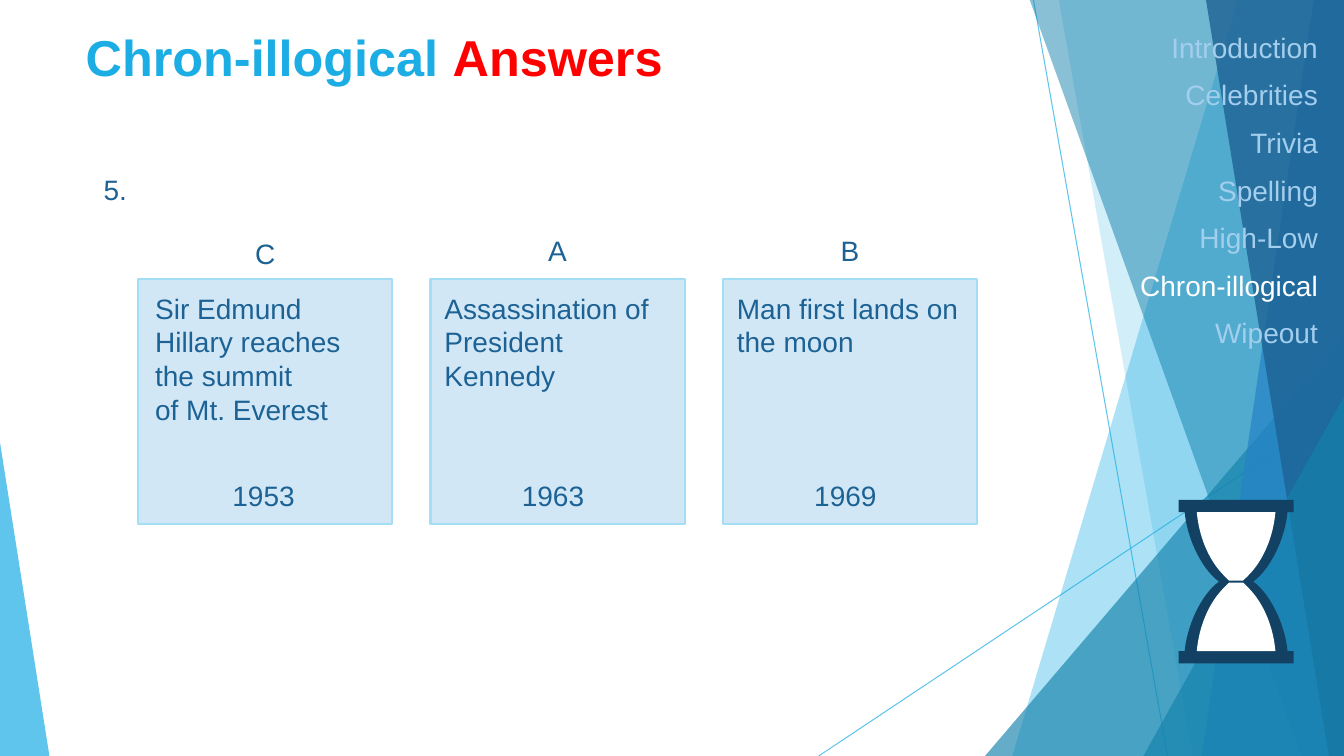
"""Build the quiz answer slide with its ribbon backdrop, dated cards, section menu and hourglass."""
from dataclasses import dataclass

from lxml import etree
from pptx import Presentation
from pptx import util as u
from pptx.dml.color import RGBColor
from pptx.enum import shapes, text
from pptx.oxml import ns

HARD_SPACE = chr(160)


@dataclass(frozen=True)
class Theme:
    font: str = "Arial"
    title_size: int = 36
    body_size: int = 20
    sky: str = "1CADE4"
    teal: str = "1482AC"
    blue: str = "2683C6"
    navy: str = "1D6294"
    red: str = "FF0000"
    card: str = "D1E7F6"
    card_edge: str = "A4DEF4"
    menu: str = "A3CEED"
    white: str = "FFFFFF"
    frame: str = "134163"


class SlideBuilder:
    def __init__(self, deck, theme):
        self.theme = theme
        self.slide = deck.slides.add_slide(deck.slide_layouts[5])
        self.width = 13.33
        self.height = 7.5

    def paint(self, shape, color, opacity=100, edge=None):
        shape.shadow.inherit = False
        shape.fill.solid()
        shape.fill.fore_color.rgb = RGBColor.from_string(color)
        if opacity < 100:
            self.fade(shape, opacity)
        if edge:
            shape.line.color.rgb = RGBColor.from_string(edge)
            shape.line.width = u.Pt(1.5)
        else:
            shape.line.fill.background()

    def fade(self, shape, opacity):
        color = next(shape._element.spPr.iter(ns.qn("a:srgbClr")))
        etree.SubElement(color, ns.qn("a:alpha"), val=str(opacity * 1000))

    def style(self, font, color, size=None, bold=False):
        font.name = self.theme.font
        font.size = u.Pt(size or self.theme.body_size)
        font.bold = bold
        font.color.rgb = RGBColor.from_string(color)

    def title(self, parts, box):
        title = self.slide.shapes.title
        title.left, title.top, title.width, title.height = map(u.Inches, box)
        frame = title.text_frame
        frame.auto_size = text.MSO_AUTO_SIZE.NONE
        frame.vertical_anchor = text.MSO_ANCHOR.TOP
        paragraph = frame.paragraphs[0]
        paragraph.alignment = text.PP_ALIGN.LEFT
        for words, color in parts:
            run = paragraph.add_run()
            run.text = words
            self.style(run.font, color, self.theme.title_size, True)

    def text(self, lines, box, align=text.PP_ALIGN.LEFT, wrap=True, before=0):
        frame = self.slide.shapes.add_textbox(*map(u.Inches, box)).text_frame
        frame.word_wrap = wrap
        for index, (words, color) in enumerate(lines):
            paragraph = frame.add_paragraph() if index else frame.paragraphs[0]
            paragraph.text = words
            paragraph.alignment = align
            paragraph.space_before = u.Pt(before)
            self.style(paragraph.font, color)

    def preset(self, kind, box, color, opacity=100, edge=None, apex=None):
        shape = self.slide.shapes.add_shape(kind, *map(u.Inches, box))
        if apex is not None:
            shape.adjustments[0] = apex
        self.paint(shape, color, opacity, edge)

    def triangle(self, left, top, width, color, opacity, apex):
        box = (left, top, width, self.height - top)
        self.preset(shapes.MSO_SHAPE.ISOSCELES_TRIANGLE, box, color, opacity, apex=apex)

    def outline(self, points, color, opacity=100):
        corners = [(u.Inches(x), u.Inches(y)) for x, y in points]
        builder = self.slide.shapes.build_freeform(*corners[0])
        builder.add_line_segments(corners[1:], close=True)
        self.paint(builder.convert_to_shape(), color, opacity)

    def ribbon(self, top_left, bottom_left, color, opacity):
        self.outline([(top_left, -0.01), (self.width, -0.01),
                      (self.width, self.height), (bottom_left, self.height)],
                     color, opacity)

    def line(self, start, end):
        line = self.slide.shapes.add_connector(
            shapes.MSO_CONNECTOR.STRAIGHT, *map(u.Inches, start + end))
        line.line.color.rgb = RGBColor.from_string(self.theme.sky)
        line.line.width = u.Pt(0.75)
        self.fade(line, 70)
        etree.SubElement(line._element.spPr, ns.qn("a:effectLst"))

    def hourglass(self, center_x, center_y):
        rim = [(0.57, -0.81), (0.57, -0.69)]
        outer = rim + curve((0.51, -0.69), (0.49, -0.46), (0.36, -0.14), (0.17, 0))
        inner = curve((0.39, -0.69), (0.37, -0.46), (0.28, -0.22), (0.12, -0.06))
        inner.append((0.07, -0.01))

        def placed(points, flip=1):
            return [(center_x + x, center_y + flip * y) for x, y in points]

        right = outer + [(x, -y) for x, y in reversed(outer)]
        self.outline(placed(right + mirrored(right)), self.theme.frame)
        for flip in (1, -1):
            self.outline(placed(inner + mirrored(inner), flip), self.theme.white)


def curve(start, pull, push, end, steps=16):
    points = []
    for step in range(steps + 1):
        t = step / steps
        weights = ((1 - t) ** 3, 3 * t * (1 - t) ** 2, 3 * t * t * (1 - t), t ** 3)
        points.append(tuple(sum(w * p[axis] for w, p in zip(weights, (start, pull, push, end)))
                            for axis in (0, 1)))
    return points


def mirrored(points):
    return [(-x, y) for x, y in reversed(points)]


def main():
    theme = Theme()
    deck = Presentation()
    deck.slide_width, deck.slide_height = u.Inches(13.33), u.Inches(7.5)
    page = SlideBuilder(deck, theme)

    page.line((10.25, 0), (11.58, 7.5))
    page.line((13.33, 4.03), (8.12, 7.5))
    page.ribbon(12.28, 10.04, theme.sky, 36)
    page.ribbon(10.5, 11.83, theme.sky, 20)
    page.triangle(9.77, 3.33, 3.56, theme.teal, 66, apex=1)
    page.ribbon(10.21, 12.91, theme.teal, 50)
    page.ribbon(13.03, 11.92, theme.blue, 70)
    page.ribbon(11.96, 13.18, theme.navy, 80)
    page.triangle(11.34, 3.93, 1.99, theme.teal, 66, apex=1)
    page.triangle(0, 4.39, 0.49, theme.sky, 70, apex=0)

    page.title([("Chron-illogical ", theme.sky), ("Answers", theme.red)],
               (0.75, 0.21, 11.37, 1.26))
    page.text([("5.", theme.navy)], (0.93, 1.66, 0.44, 0.44), wrap=False)

    card_width, card_pitch = 2.52, 2.9
    summit = "Sir Edmund Hillary reaches the summit " + HARD_SPACE.join(["of", "Mt.", "Everest"])
    landing = "Man first lands on " + HARD_SPACE.join(["the", "moon"])
    answers = [
        ("C", 2.3, summit, "1953", 0.07, 2.36, 1.45),
        ("A", 2.27, "Assassination of President Kennedy", "1963", 0.04, 2.38, 1.11),
        ("B", 2.27, landing, "1969", 0.04, 2.47, 0.77),
    ]
    for index, (letter, letter_top, event, year, inset, width, height) in enumerate(answers):
        left = 1.37 + index * card_pitch
        page.preset(shapes.MSO_SHAPE.RECTANGLE, (left, 2.77, card_width, 2.43),
                    theme.card, edge=theme.card_edge)
        page.text([(letter, theme.navy)], (left + card_width / 2 - 0.2, letter_top, 0.4, 0.44),
                  text.PP_ALIGN.CENTER, wrap=False)
        page.text([(event, theme.navy)], (left + inset, 2.84, width, height))
        page.text([(year, theme.navy)], (left + inset + 0.76, 4.7, 0.83, 0.44),
                  text.PP_ALIGN.CENTER, wrap=False)

    current = "Chron-illogical"
    sections = ["Introduction", "Celebrities", "Trivia", "Spelling", "High-Low", current, "Wipeout"]
    page.text([(name, theme.white if name == current else theme.menu) for name in sections],
              (10.56, 0.25, 2.61, 4.52), text.PP_ALIGN.RIGHT, before=10)
    page.hourglass(12.26, 5.77)
    deck.save("out.pptx")


if __name__ == "__main__":
    main()
